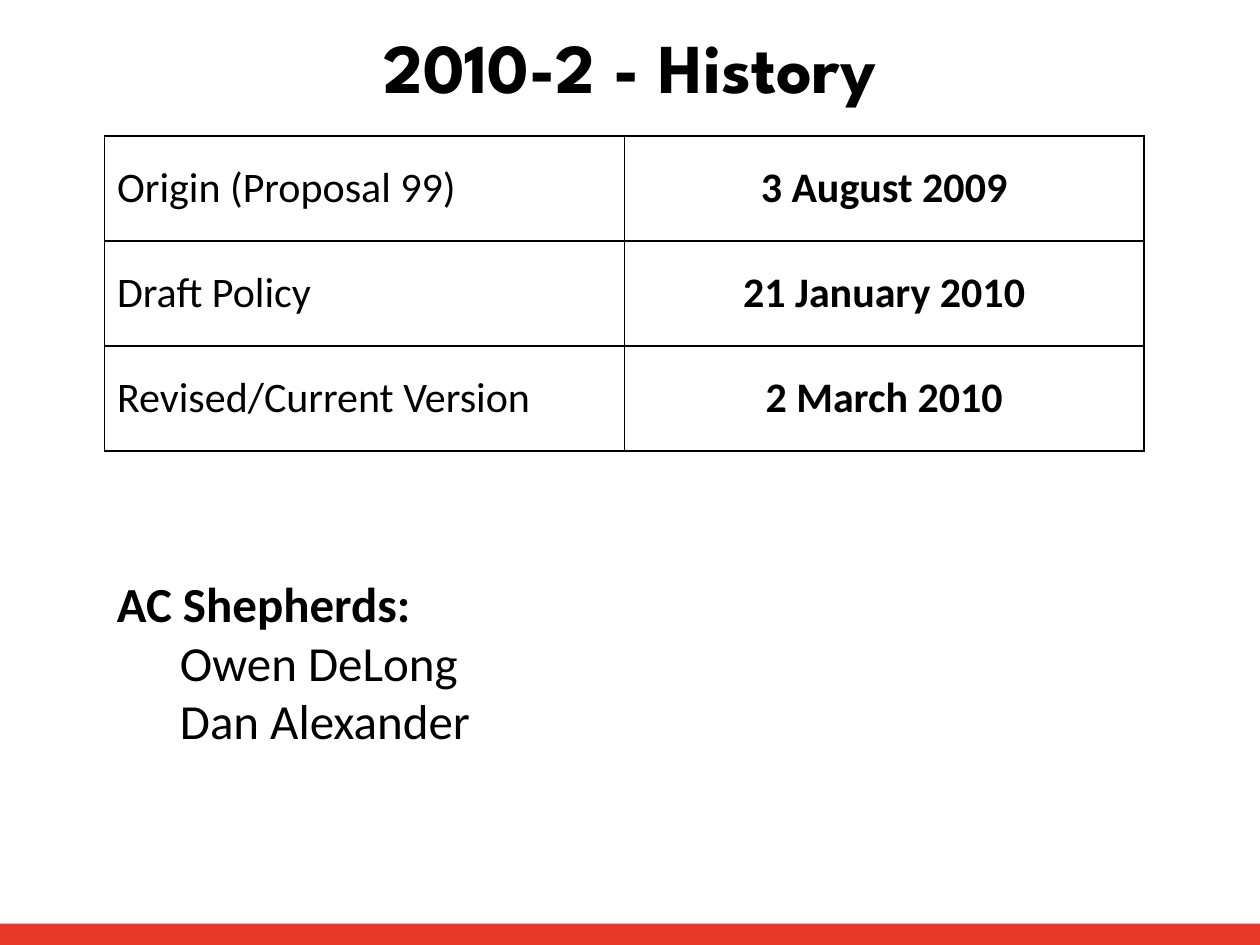
import pptx
import pptx.dml.color
import pptx.enum.shapes
import pptx.enum.text
import pptx.oxml
import pptx.oxml.ns
import pptx.util
from pptx.util import Inches

COLORS = {"text": "000000", "border": "000000", "cell": "FFFFFF", "bar": "E83828"}
BODY_FONT = "Calibri"
TITLE_FONT = "League Spartan"
HISTORY = [
    ("Origin (Proposal 99)", "3 August 2009"),
    ("Draft Policy", "21 January 2010"),
    ("Revised/Current Version", "2 March 2010"),
]
SHEPHERDS = ["Owen DeLong", "Dan Alexander"]
CENTER = pptx.enum.text.PP_ALIGN.CENTER
LEFT = pptx.enum.text.PP_ALIGN.LEFT
MIDDLE = pptx.enum.text.MSO_ANCHOR.MIDDLE


def rgb(name):
    return pptx.dml.color.RGBColor.from_string(COLORS[name])


def write(paragraph, text, size, bold=False, font=BODY_FONT, align=LEFT):
    paragraph.text = text
    paragraph.alignment = align
    paragraph.font.name = font
    paragraph.font.size = pptx.util.Pt(size)
    paragraph.font.bold = bold
    paragraph.font.color.rgb = rgb("text")


def set_borders(cell):
    properties = cell._tc.get_or_add_tcPr()
    for index, side in enumerate(("lnL", "lnR", "lnT", "lnB")):
        line = pptx.oxml.parse_xml(
            f'<a:{side} {pptx.oxml.ns.nsdecls("a")} w="{pptx.util.Pt(1)}"><a:solidFill>'
            f'<a:srgbClr val="{COLORS["border"]}"/></a:solidFill></a:{side}>'
        )
        properties.insert(index, line)


def add_footer_bar(slide, left, top, width, height):
    rectangle = pptx.enum.shapes.MSO_SHAPE.RECTANGLE
    bar = slide.shapes.add_shape(rectangle, left, top, width, height)
    bar.shadow.inherit = False
    bar.fill.solid()
    bar.fill.fore_color.rgb = rgb("bar")
    bar.line.fill.background()


def add_title(slide, left, top, width, height):
    frame = slide.shapes.add_textbox(left, top, width, height).text_frame
    frame.word_wrap = True
    frame.vertical_anchor = MIDDLE
    write(frame.paragraphs[0], "2010-2 - History", 40, True, TITLE_FONT, CENTER)


def add_history_table(slide, left, top, width, height):
    shape = slide.shapes.add_table(len(HISTORY), 2, left, top, width, height)
    table = shape.table
    table.first_row = False
    table.horz_banding = False
    for row, (event, date) in enumerate(HISTORY):
        write(table.cell(row, 0).text_frame.paragraphs[0], event, 24)
        write(table.cell(row, 1).text_frame.paragraphs[0], date, 24, True, align=CENTER)
    for cell in table.iter_cells():
        cell.vertical_anchor = MIDDLE
        cell.fill.solid()
        cell.fill.fore_color.rgb = rgb("cell")
        set_borders(cell)


def add_shepherds(slide, left, top, width, height):
    frame = slide.shapes.add_textbox(left, top, width, height).text_frame
    frame.word_wrap = True
    write(frame.paragraphs[0], "AC Shepherds:", 28, True)
    for name in SHEPHERDS:
        paragraph = frame.add_paragraph()
        write(paragraph, name, 28)
        paragraph._p.get_or_add_pPr().set("marL", str(Inches(0.5)))


def main():
    presentation = pptx.Presentation()
    presentation.slide_width = Inches(10)
    presentation.slide_height = Inches(7.5)
    slide = presentation.slides.add_slide(presentation.slide_layouts[6])
    add_footer_bar(slide, 0, Inches(7.33), Inches(10), Inches(0.17))
    add_history_table(slide, Inches(0.83), Inches(1.08), Inches(8.25), Inches(2.5))
    add_shepherds(slide, Inches(0.83), Inches(4.5), Inches(4.08), Inches(1.51))
    add_title(slide, Inches(0.5), Inches(0.13), Inches(9), Inches(0.78))
    presentation.save("out.pptx")


if __name__ == "__main__":
    main()
